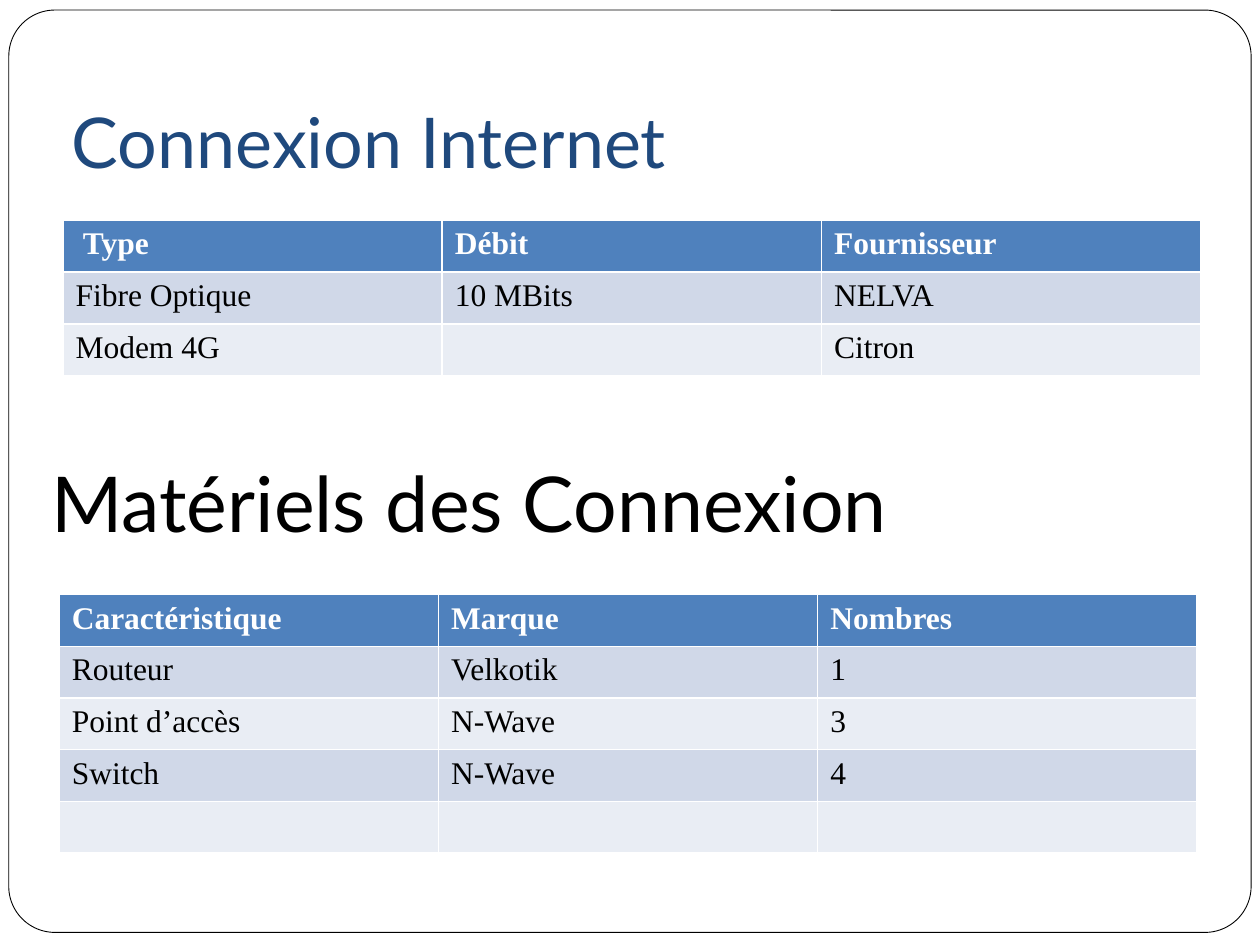
from pptx import Presentation
from pptx.dml.color import RGBColor
from pptx.enum.shapes import MSO_SHAPE as Shape
from pptx.enum.text import MSO_ANCHOR as Anchor, MSO_AUTO_SIZE as AutoSize, PP_ALIGN as Align
from pptx.util import Inches, Pt

WHITE = RGBColor(0xFF, 0xFF, 0xFF)
BLACK = RGBColor(0, 0, 0)
NAVY = RGBColor(0x1F, 0x49, 0x7D)
HEADER_BLUE = RGBColor(0x4F, 0x81, 0xBD)
BANDS = (RGBColor(0xD0, 0xD8, 0xE8), RGBColor(0xE9, 0xED, 0xF4))

TITLE_FONT = dict(name="Lato", size=Pt(40), bold=False)
SUBTITLE_FONT = dict(name="Lato", size=Pt(44), bold=False)
HEADER_FONT = dict(name="Times New Roman", size=Pt(18), bold=True)
BODY_FONT = dict(HEADER_FONT, bold=False)

TABLE_WIDTH = 9.03
ROW_HEIGHT = 0.41
EMPTY_ROW_HEIGHT = 0.38

CONNECTIONS = [
    (" Type", "Débit", "Fournisseur"),
    ("Fibre Optique", "10 MBits", "NELVA"),
    ("Modem 4G", "", "Citron"),
]
EQUIPMENT = [
    ("Caractéristique", "Marque", "Nombres"),
    ("Routeur", "Velkotik", "1"),
    ("Point d’accès", "N-Wave", "3"),
    ("Switch", "N-Wave", "4"),
    ("", "", ""),
]


def set_attributes(target, values):
    for name, value in values.items():
        setattr(target, name, value)


def write(paragraph, text, font_values, color):
    run = paragraph.add_run()
    run.text = text
    set_attributes(run.font, font_values)
    run.font.color.rgb = color


def add_frame(slide):
    """Put the rounded page border behind everything else."""
    frame = slide.shapes.add_shape(
        Shape.ROUNDED_RECTANGLE, Inches(0.07), Inches(0.08), Inches(9.86), Inches(7.32))
    frame.adjustments[0] = 0.05
    frame.shadow.inherit = False
    frame.fill.solid()
    frame.fill.fore_color.rgb = WHITE
    frame.line.color.rgb = BLACK
    frame.line.width = Pt(0.5)
    slide.shapes._spTree.insert(2, frame._element)


def format_heading(heading, text, font_values, color, frame_values):
    frame = heading.text_frame
    set_attributes(frame, dict(frame_values, word_wrap=True, auto_size=AutoSize.NONE))
    paragraph = frame.paragraphs[0]
    paragraph.alignment = Align.LEFT
    write(paragraph, text, font_values, color)


def add_title(slide):
    title = slide.shapes.title
    set_attributes(title, dict(left=Inches(0.47), top=Inches(0.3),
                               width=Inches(TABLE_WIDTH), height=Inches(1.25)))
    format_heading(title, "Connexion Internet", TITLE_FONT, NAVY,
                   dict(vertical_anchor=Anchor.BOTTOM, margin_bottom=Inches(0.1)))


def add_subtitle(slide):
    subtitle = slide.shapes.add_textbox(Inches(0.31), Inches(3.36), Inches(9), Inches(1.25))
    format_heading(subtitle, "Matériels des Connexion", SUBTITLE_FONT, BLACK,
                   dict(vertical_anchor=Anchor.MIDDLE))


def add_grid(slide, left, top, records):
    """Add a table with a blue header row and alternating body bands."""
    heights = [ROW_HEIGHT if any(record) else EMPTY_ROW_HEIGHT for record in records]
    table = slide.shapes.add_table(
        len(records), len(records[0]), Inches(left), Inches(top),
        Inches(TABLE_WIDTH), Inches(sum(heights))).table
    for row_index, record in enumerate(records):
        table.rows[row_index].height = Inches(heights[row_index])
        is_header = row_index == 0
        fill = HEADER_BLUE if is_header else BANDS[(row_index - 1) % 2]
        font_values, color = (HEADER_FONT, WHITE) if is_header else (BODY_FONT, BLACK)
        for column_index, text in enumerate(record):
            cell = table.cell(row_index, column_index)
            cell.fill.solid()
            cell.fill.fore_color.rgb = fill
            if text:
                write(cell.text_frame.paragraphs[0], text, font_values, color)


def main():
    presentation = Presentation()
    presentation.slide_width = Inches(10)
    presentation.slide_height = Inches(7.5)
    slide = presentation.slides.add_slide(presentation.slide_layouts[5])
    add_frame(slide)
    add_title(slide)
    add_grid(slide, 0.5, 1.75, CONNECTIONS)
    add_subtitle(slide)
    add_grid(slide, 0.47, 4.72, EQUIPMENT)
    presentation.save("out.pptx")


if __name__ == "__main__":
    main()
